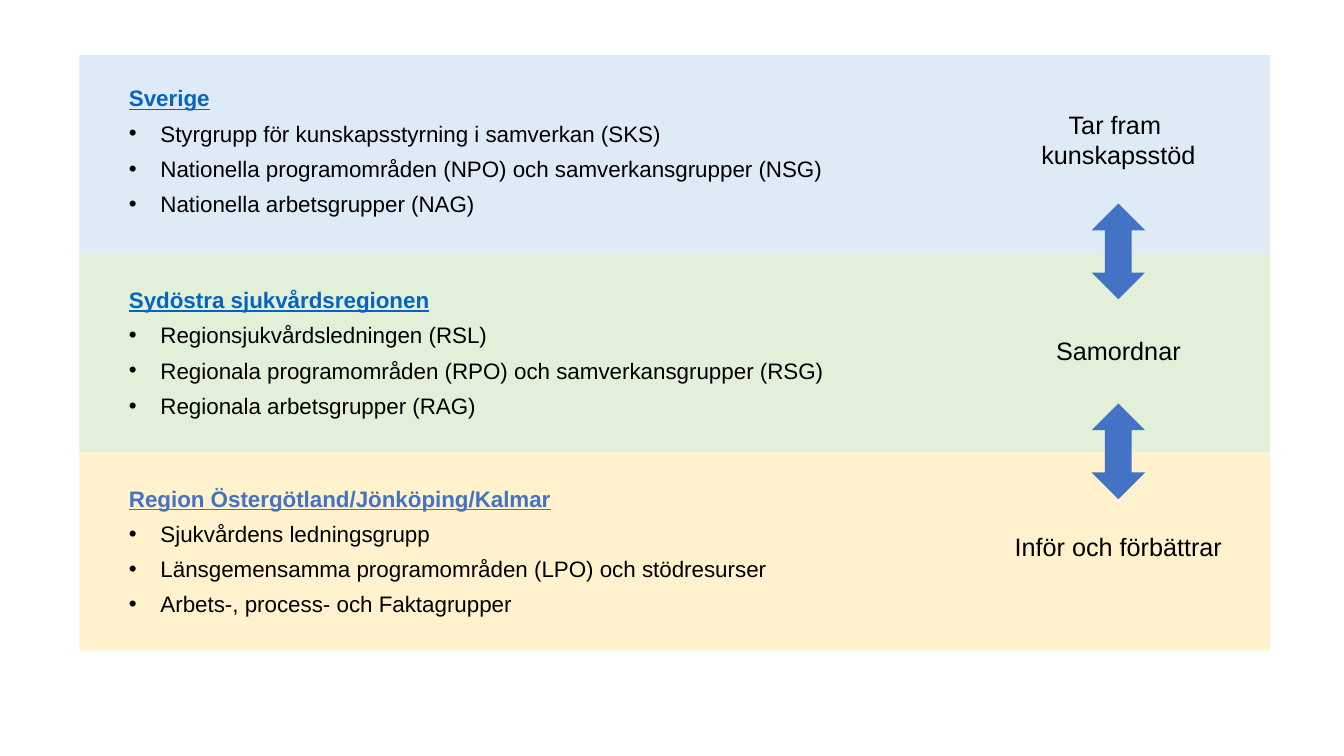
from pptx import Presentation
from pptx.dml.color import RGBColor
from pptx.enum.shapes import MSO_SHAPE as Shape
from pptx.enum.text import MSO_AUTO_SIZE as AutoSize, PP_ALIGN as Align
from pptx.oxml.ns import qn
from pptx.util import Pt
from lxml.etree import SubElement

BLACK = RGBColor(0x00, 0x00, 0x00)
LINK_BLUE = RGBColor(0x05, 0x63, 0xC1)
BLUE = RGBColor(0x44, 0x72, 0xC4)
PALE_BLUE = RGBColor(0xDE, 0xEB, 0xF7)
PALE_GREEN = RGBColor(0xE2, 0xF0, 0xD9)
PALE_YELLOW = RGBColor(0xFF, 0xF2, 0xCC)

BAND_LEFT, BAND_TOP, BAND_WIDTH, BAND_HEIGHT = 56.7, 39.5, 850.4, 141.73
GROUPS_LEFT, GROUPS_HEIGHT = 85, 103
ROLE_LEFT, ROLE_WIDTH = 704.9, 187.9
ARROW_WIDTH, ARROW_HEIGHT = 38.2, 68.4
BULLET_INDENT = 22.5

# Band colour, heading, heading colour, groups, groups top and width, role lines, role top
LEVELS = [
    (PALE_BLUE, "Sverige", LINK_BLUE,
     ["Styrgrupp för kunskapsstyrning i samverkan (SKS)",
      "Nationella programområden (NPO) och samverkansgrupper (NSG)",
      "Nationella arbetsgrupper (NAG)"],
     56.9, 575.3, ["Tar fram ", "kunskapsstöd"], 74.2),
    (PALE_GREEN, "Sydöstra sjukvårdsregionen", LINK_BLUE,
     ["Regionsjukvårdsledningen (RSL)",
      "Regionala programområden (RPO) och samverkansgrupper (RSG)",
      "Regionala arbetsgrupper (RAG)"],
     200.9, 575.3, ["Samordnar"], 236.2),
    (PALE_YELLOW, "Region Östergötland/Jönköping/Kalmar", BLUE,
     ["Sjukvårdens ledningsgrupp",
      "Länsgemensamma programområden (LPO) och stödresurser",
      "Arbets-, process- och Faktagrupper"],
     342.7, 553.7, ["Inför och förbättrar"], 375.8),
]
ARROW_TOPS = [145.4, 288.2]


class LevelSlide:
    font_name = "Arial"

    def __init__(self, slide):
        self.shapes = slide.shapes

    def block(self, kind, left, top, width, height, color):
        block = self.shapes.add_shape(kind, Pt(left), Pt(top), Pt(width), Pt(height))
        block.shadow.inherit = False
        block.fill.solid()
        block.fill.fore_color.rgb = color
        block.line.fill.background()

    def text_frame(self, left, top, width, height):
        frame = self.shapes.add_textbox(Pt(left), Pt(top), Pt(width), Pt(height)).text_frame
        frame.word_wrap = True
        frame.auto_size = AutoSize.SHAPE_TO_FIT_TEXT
        return frame

    def style(self, paragraph, size, color):
        paragraph.font.name = self.font_name
        paragraph.font.size = Pt(size)
        paragraph.font.color.rgb = color

    def add_bullet(self, paragraph):
        properties = paragraph._p.get_or_add_pPr()
        properties.set("marL", str(Pt(BULLET_INDENT)))
        properties.set("indent", str(-Pt(BULLET_INDENT)))
        SubElement(properties, qn("a:buFont"), typeface=self.font_name)
        SubElement(properties, qn("a:buChar"), char="•")

    def groups(self, top, width, heading, heading_color, groups):
        frame = self.text_frame(GROUPS_LEFT, top, width, GROUPS_HEIGHT)
        frame.text = "\n".join([heading, *groups])
        title, *items = frame.paragraphs
        for item in items:
            self.add_bullet(item)
            self.style(item, 16, BLACK)
        self.style(title, 16, heading_color)
        title.font.bold = True
        title.font.underline = True
        for paragraph in frame.paragraphs:
            paragraph.space_after = Pt(6)

    def role(self, top, lines):
        frame = self.text_frame(ROLE_LEFT, top, ROLE_WIDTH, 7.2 + 21.8 * len(lines))
        frame.text = "\n".join(lines)
        for paragraph in frame.paragraphs:
            paragraph.alignment = Align.CENTER
            self.style(paragraph, 18, BLACK)


def main():
    deck = Presentation()
    deck.slide_width, deck.slide_height = Pt(960), Pt(540)
    page = LevelSlide(deck.slides.add_slide(deck.slide_layouts[6]))

    # Bands, with the groups and the role of each level
    for index, (color, heading, heading_color, groups, groups_top, groups_width,
                role, role_top) in enumerate(LEVELS):
        page.block(Shape.RECTANGLE, BAND_LEFT, BAND_TOP + index * BAND_HEIGHT,
                   BAND_WIDTH, BAND_HEIGHT, color)
        page.groups(groups_top, groups_width, heading, heading_color, groups)
        page.role(role_top, role)

    # Arrows between the levels, centred under the roles
    arrow_left = ROLE_LEFT + (ROLE_WIDTH - ARROW_WIDTH) / 2
    for top in ARROW_TOPS:
        page.block(Shape.UP_DOWN_ARROW, arrow_left, top, ARROW_WIDTH, ARROW_HEIGHT, BLUE)

    deck.save("out.pptx")


if __name__ == "__main__":
    main()
